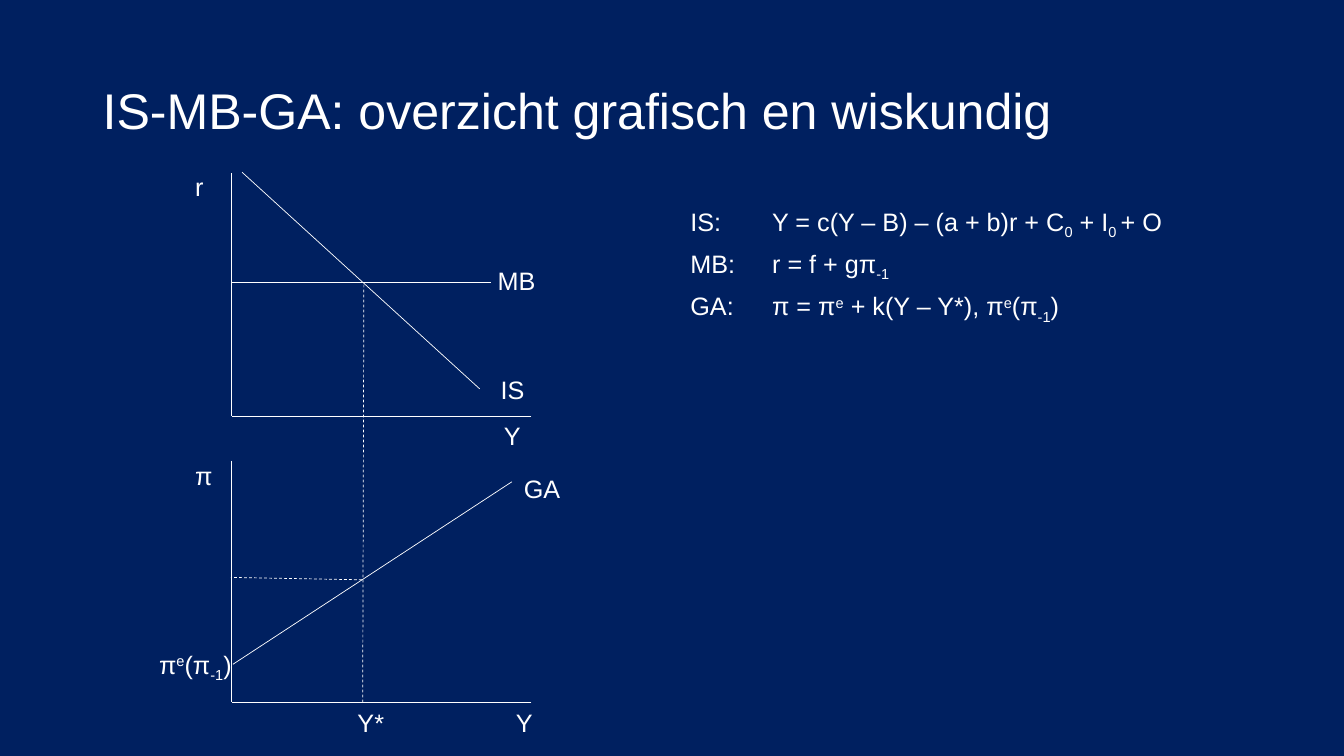
from lxml import etree
from pptx import Presentation
from pptx.dml.color import RGBColor
from pptx.enum.dml import MSO_LINE
from pptx.enum.shapes import MSO_CONNECTOR
from pptx.enum.text import MSO_ANCHOR, MSO_AUTO_SIZE
from pptx.oxml.ns import qn
from pptx.util import Cm, Pt

STRAIGHT = MSO_CONNECTOR.STRAIGHT
DASH = MSO_LINE.DASH
MIDDLE, TOP = MSO_ANCHOR.MIDDLE, MSO_ANCHOR.TOP
GROW, FIXED = MSO_AUTO_SIZE.SHAPE_TO_FIT_TEXT, MSO_AUTO_SIZE.NONE
NAVY, WHITE = "002060", "FFFFFF"
SUB, SUP = "-25000", "30000"


def rgb(code):
    return RGBColor.from_string(code)


def add_text(box, paragraphs, size=18, wrap=False, anchor=TOP):
    """Add a text box; each paragraph is a list of runs, a (text, baseline) pair being raised or lowered."""
    tf = s.shapes.add_textbox(*(Cm(v) for v in box)).text_frame
    tf.word_wrap = wrap
    tf.auto_size = FIXED if wrap else GROW
    tf.vertical_anchor = anchor
    for i, runs in enumerate(paragraphs):
        p = tf.paragraphs[0] if i == 0 else tf.add_paragraph()
        for run in runs:
            text, baseline = (run, None) if isinstance(run, str) else run
            r = p.add_run()
            r.text = text
            r.font.name = "Arial"
            r.font.size = Pt(size)
            r.font.color.rgb = rgb(WHITE)
            if baseline:
                r._r.get_or_add_rPr().set("baseline", baseline)
    return tf


prs = Presentation()
prs.slide_width, prs.slide_height = Cm(33.87), Cm(19.05)
s = prs.slides.add_slide(prs.slide_layouts[6])
s.background.fill.solid()
s.background.fill.fore_color.rgb = rgb(NAVY)

# Title
title = add_text((2.34, 1.02, 29.21, 3.68), [["IS-MB-GA: overzicht grafisch en wiskundig"]],
                 size=35.8, wrap=True, anchor=MIDDLE)
title.paragraphs[0].line_spacing = 0.9

# Equations, aligned on one tab stop
expected_inflation = ["π", ("e", SUP), "(π", ("-1", SUB), ")"]
equations = add_text((17.15, 5.08, 14.4, 12.09), [
    ["IS:\tY = c(Y – B) – (a + b)r + C", ("0", SUB), " + I", ("0 ", SUB), "+ O"],
    ["MB:\tr = f + gπ", ("-1", SUB)],
    ["GA:\tπ = π", ("e", SUP), " + k(Y – Y*), "] + expected_inflation,
], wrap=True)
for p in equations.paragraphs:
    p.line_spacing = 0.9
    p.space_before = Pt(8.1)
    tabs = etree.SubElement(p._p.get_or_add_pPr(), qn("a:tabLst"))
    etree.SubElement(tabs, qn("a:tab"), pos=str(Cm(2.06)), algn="l")

# Axes, curves and dashed guides
AXIS_X, AXIS_END = 5.84, 13.39
IS_MB_BASE, GA_BASE, MB_Y = 10.49, 17.7, 7.11
solid_lines = [
    (AXIS_X, 4.37, AXIS_X, IS_MB_BASE),
    (AXIS_END, IS_MB_BASE, AXIS_X, IS_MB_BASE),
    (12.09, 9.8, 6.1, 4.34),
    (12.37, MB_Y, AXIS_X, MB_Y),
    (5.87, 16.74, 12.9, 12.14),
    (AXIS_X, 11.61, AXIS_X, GA_BASE),
    (AXIS_END, GA_BASE, AXIS_X, GA_BASE),
]
dashed_lines = [
    (9.14, GA_BASE, 9.17, MB_Y),
    (9.12, 14.61, 5.82, 14.55),
]
for ends in solid_lines + dashed_lines:
    line = s.shapes.add_connector(STRAIGHT, *(Cm(v) for v in ends))
    line.line.color.rgb = rgb(WHITE)
    line.line.width = Pt(0.5)
    if ends in dashed_lines:
        line.line.dash_style = DASH
    etree.SubElement(line._element.spPr, qn("a:effectLst"))

# Labels of axes and curves
for runs, left, top, width in [
    (["r"], 4.67, 4.19, 0.74),
    (["MB"], 12.29, 6.55, 1.47),
    (["IS"], 12.37, 9.3, 1.12),
    (["Y"], 12.45, 10.46, 0.94),
    (["π"], 4.67, 11.48, 0.97),
    (["GA"], 12.95, 11.81, 1.45),
    (expected_inflation, 3.76, 16.23, 2.44),
    (["Y*"], 8.76, GA_BASE, 1.19),
    (["Y"], 12.75, GA_BASE, 0.94),
]:
    add_text((left, top, width, 1.02), [runs])

prs.save("out.pptx")
